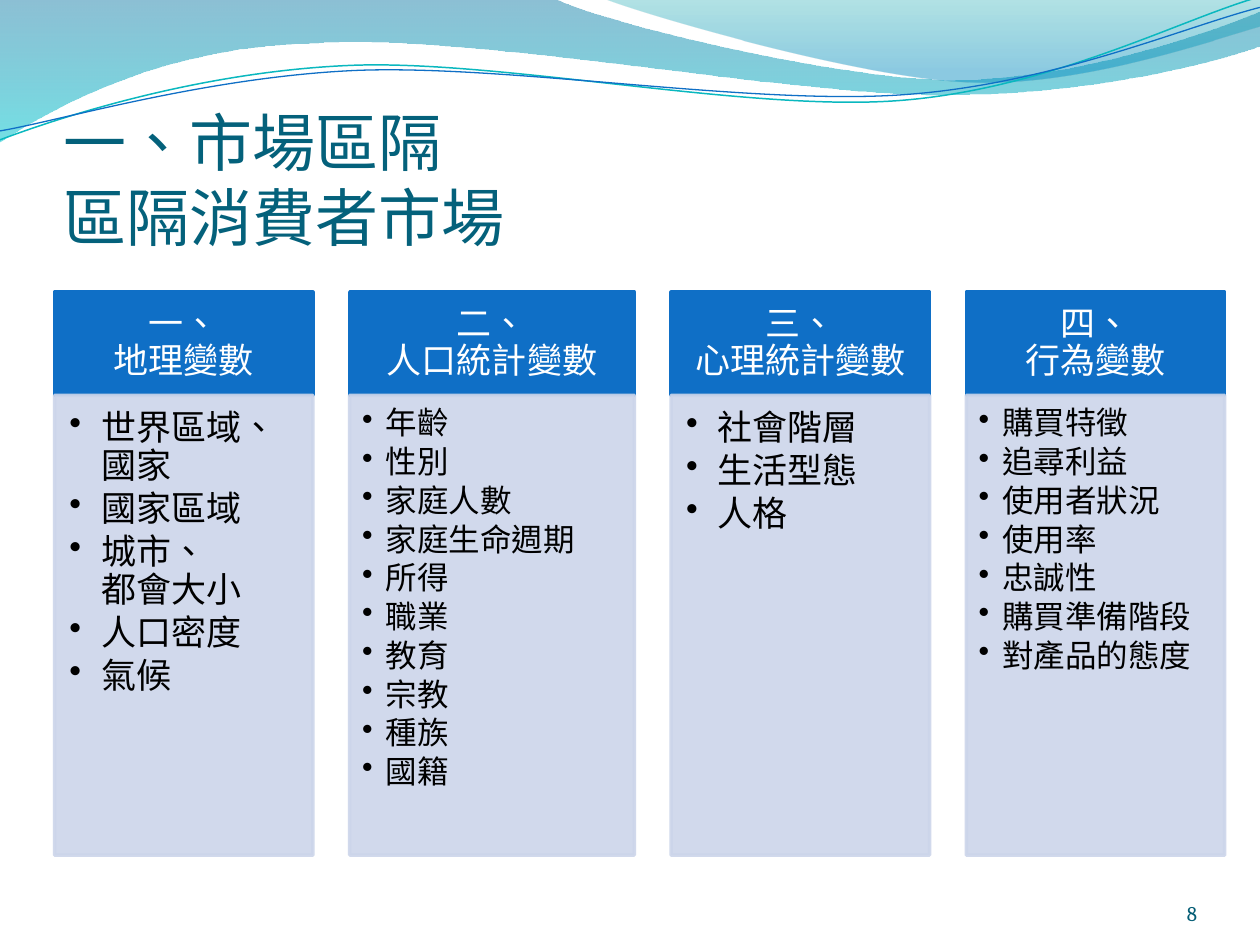
from lxml.etree import SubElement
from pptx import Presentation
from pptx.dml.color import RGBColor
from pptx.enum.lang import MSO_LANGUAGE_ID
from pptx.enum.shapes import MSO_SHAPE
from pptx.enum.text import MSO_ANCHOR, MSO_AUTO_SIZE, PP_ALIGN
from pptx.oxml.ns import qn
from pptx.util import Cm, Pt

WHITE = RGBColor(0xFF, 0xFF, 0xFF)
BLACK = RGBColor(0x00, 0x00, 0x00)
BLUE = RGBColor(0x0F, 0x6F, 0xC6)
PALE = RGBColor(0xCC, 0xD5, 0xEA)
TEAL = RGBColor(0x0A, 0xB8, 0xBF)
TITLE = RGBColor(0x04, 0x61, 0x7B)
NUMBER = RGBColor(0x04, 0x5D, 0x75)
WAVE_BLUE = RGBColor(0x00, 0x74, 0xA1)
WAVE_CYAN = RGBColor(0x00, 0xC6, 0xCF)
CREST_GREEN = RGBColor(0x00, 0xA1, 0xA9)
CREST_BLUE = RGBColor(0x00, 0x8B, 0xBF)

WAVE = [(0, 0), (11.18, -0.03), (12.09, 0.43, 16.87, 1.6, 19.25, 1.6),
        (21.67, 1.6, 24.33, 0.66, 25.4, 0.23), (25.43, 0.91),
        (24.97, 1.12, 22.1, 1.93, 18.95, 1.91),
        (15.8, 1.91, 9.7, 0.71, 6.53, 0.86),
        (3.28, 0.91, 1.17, 2.11, -0.03, 2.87)]
CREST = [(12.17, -0.03), (12.93, 0.28, 17.32, 1.57, 19.53, 1.65),
         (21.74, 1.75, 24.41, 0.81, 25.4, 0.53), (25.4, 0)]
TEAL_CURVE = [(0, 2.82), (1.22, 2.36, 4.01, 1.45, 7.04, 1.32),
              (10.03, 1.19, 15.06, 2.26, 18.11, 2.03),
              (21.16, 1.8, 23.83, 0.38, 25.35, -0.05)]
BLUE_CURVE = [(0, 2.64), (1.19, 2.44, 4.17, 1.55, 7.19, 1.42),
              (10.24, 1.3, 15.16, 2.13, 18.21, 1.91),
              (21.23, 1.7, 23.9, 0.53, 25.4, 0.15)]

COLUMNS = [
    ("一、\v地理變數", 5.21, 20,
     ["世界區域、\v國家", "國家區域", "城市、\v都會大小", "人口密度", "氣候"]),
    ("二、\v人口統計變數", 5.74, 18,
     ["年齡", "性別", "家庭人數", "家庭生命週期", "所得",
      "職業", "教育", "宗教", "種族", "國籍"]),
    ("三、\v心理統計變數", 5.21, 20, ["社會階層", "生活型態", "人格"]),
    ("四、\v行為變數", 5.21, 18,
     ["購買特徵", "追尋利益", "使用者狀況", "使用率",
      "忠誠性", "購買準備階段", "對產品的態度"]),
]
LEFT, GAP = 1.1, 0.74
HEAD_TOP, HEAD_HEIGHT, LIST_HEIGHT = 5.89, 2.08, 9.27
HEAD_INSETS = (0.41, 0.23, 0.41, 0.23)
LIST_INSETS = {20: (0.3, 0.3, 0.41, 0.43), 18: (0.25, 0.25, 0.36, 0.41)}
LIST_INDENT = {20: 0.64, 18: 0.48}


def set_alpha(element, percent):
    for color in element.iter(qn("a:srgbClr")):
        SubElement(color, qn("a:alpha"), val=str(percent * 1000))


def add_outline(s, segments, close):
    points = [(Cm(seg[i]), Cm(seg[i + 1]))
              for seg in segments for i in range(0, len(seg), 2)]
    builder = s.shapes.build_freeform(*points[0])
    builder.add_line_segments(points[1:], close=close)
    sp = builder.convert_to_shape()
    sp.shadow.inherit = False
    lines = iter(list(sp._element.iter(qn("a:lnTo"))))
    for seg in segments[1:]:
        first = next(lines)
        if len(seg) == 6:
            first.tag = qn("a:cubicBezTo")
            for _ in range(2):
                control = next(lines)
                first.append(control[0])
                control.getparent().remove(control)
    return sp


def add_wave(s, segments, stops):
    sp = add_outline(s, segments, True)
    sp.line.fill.background()
    sp.fill.gradient()
    sp.fill.gradient_angle = 270
    for stop, (position, color, _) in zip(sp.fill.gradient_stops, stops):
        stop.position = position
        stop.color.rgb = color
    for gs, (_, _, alpha) in zip(sp._element.iter(qn("a:gs")), stops):
        set_alpha(gs, alpha)


def add_curve(s, segments, color, width):
    sp = add_outline(s, segments, False)
    sp.fill.background()
    sp.line.color.rgb = color
    sp.line.width = Pt(width)


def set_frame(tf, insets, anchor):
    tf.word_wrap = True
    tf.auto_size = MSO_AUTO_SIZE.NONE
    tf.vertical_anchor = anchor
    tf.margin_left, tf.margin_top, tf.margin_right, tf.margin_bottom = map(Cm, insets)


def set_paragraph(p, text, font, size, color, align):
    p.text = text
    p.alignment = align
    p.font.name = font
    p.font.size = Pt(size)
    p.font.color.rgb = color
    for r in p.runs:
        r.font.language_id = MSO_LANGUAGE_ID.TRADITIONAL_CHINESE


def add_box(s, left, top, width, height, color):
    sp = s.shapes.add_shape(MSO_SHAPE.RECTANGLE, Cm(left), Cm(top), Cm(width), Cm(height))
    sp.shadow.inherit = False
    sp.fill.solid()
    sp.fill.fore_color.rgb = color
    sp.line.color.rgb = color
    sp.line.width = Pt(2)
    return sp


def add_head(s, left, width, text):
    sp = add_box(s, left, HEAD_TOP, width, HEAD_HEIGHT, BLUE)
    set_frame(sp.text_frame, HEAD_INSETS, MSO_ANCHOR.MIDDLE)
    p = sp.text_frame.paragraphs[0]
    set_paragraph(p, text, "Cambria", 20, WHITE, PP_ALIGN.CENTER)
    p.line_spacing = 0.9


def add_list(s, left, width, size, items):
    sp = add_box(s, left, HEAD_TOP + HEAD_HEIGHT, width, LIST_HEIGHT, PALE)
    set_alpha(sp._element.spPr, 90)
    tf = sp.text_frame
    set_frame(tf, LIST_INSETS[size], MSO_ANCHOR.TOP)
    indent = Cm(LIST_INDENT[size])
    for i, item in enumerate(items):
        p = tf.add_paragraph() if i else tf.paragraphs[0]
        set_paragraph(p, item, "Cambria", size, BLACK, PP_ALIGN.LEFT)
        p.level = 1
        p.line_spacing = 0.9
        p.space_after = Pt(size * 0.15)
        pPr = p._p.get_or_add_pPr()
        pPr.set("marL", str(indent))
        pPr.set("indent", str(-indent))
        bullet = pPr.makeelement(qn("a:buChar"), {"char": "•"})
        pPr.insert_element_before(bullet, "a:tabLst", "a:defRPr", "a:extLst")


def add_title(s, text):
    title = s.shapes.title
    title.left, title.top, title.width, title.height = map(Cm, (1.27, 1.95, 23.06, 3.18))
    set_frame(title.text_frame, (0, 0.13, 0, 0), MSO_ANCHOR.BOTTOM)
    set_paragraph(title.text_frame.paragraphs[0], text, "Calibri", 36, TITLE, PP_ALIGN.LEFT)


def add_number(s, text):
    box = s.shapes.add_textbox(Cm(22.02), Cm(17.65), Cm(2.11), Cm(1.02))
    set_frame(box.text_frame, (0, 0, 0, 0), MSO_ANCHOR.BOTTOM)
    set_paragraph(box.text_frame.paragraphs[0], text, "Cambria", 12, NUMBER, PP_ALIGN.RIGHT)


def main():
    prs = Presentation()
    prs.slide_width, prs.slide_height = Cm(25.4), Cm(19.05)
    s = prs.slides.add_slide(prs.slide_layouts[5])
    add_wave(s, WAVE, [(0, WAVE_BLUE, 45), (1, WAVE_CYAN, 55)])
    add_wave(s, CREST, [(0, CREST_GREEN, 30), (0.8, CREST_BLUE, 45)])
    add_curve(s, TEAL_CURVE, TEAL, 0.85)
    add_curve(s, BLUE_CURVE, BLUE, 0.75)
    add_title(s, "一、市場區隔\v區隔消費者市場")
    left = LEFT
    for head, width, size, items in COLUMNS:
        add_head(s, left, width, head)
        add_list(s, left, width, size, items)
        left += width + GAP
    add_number(s, "8")
    prs.save("out.pptx")


if __name__ == "__main__":
    main()
